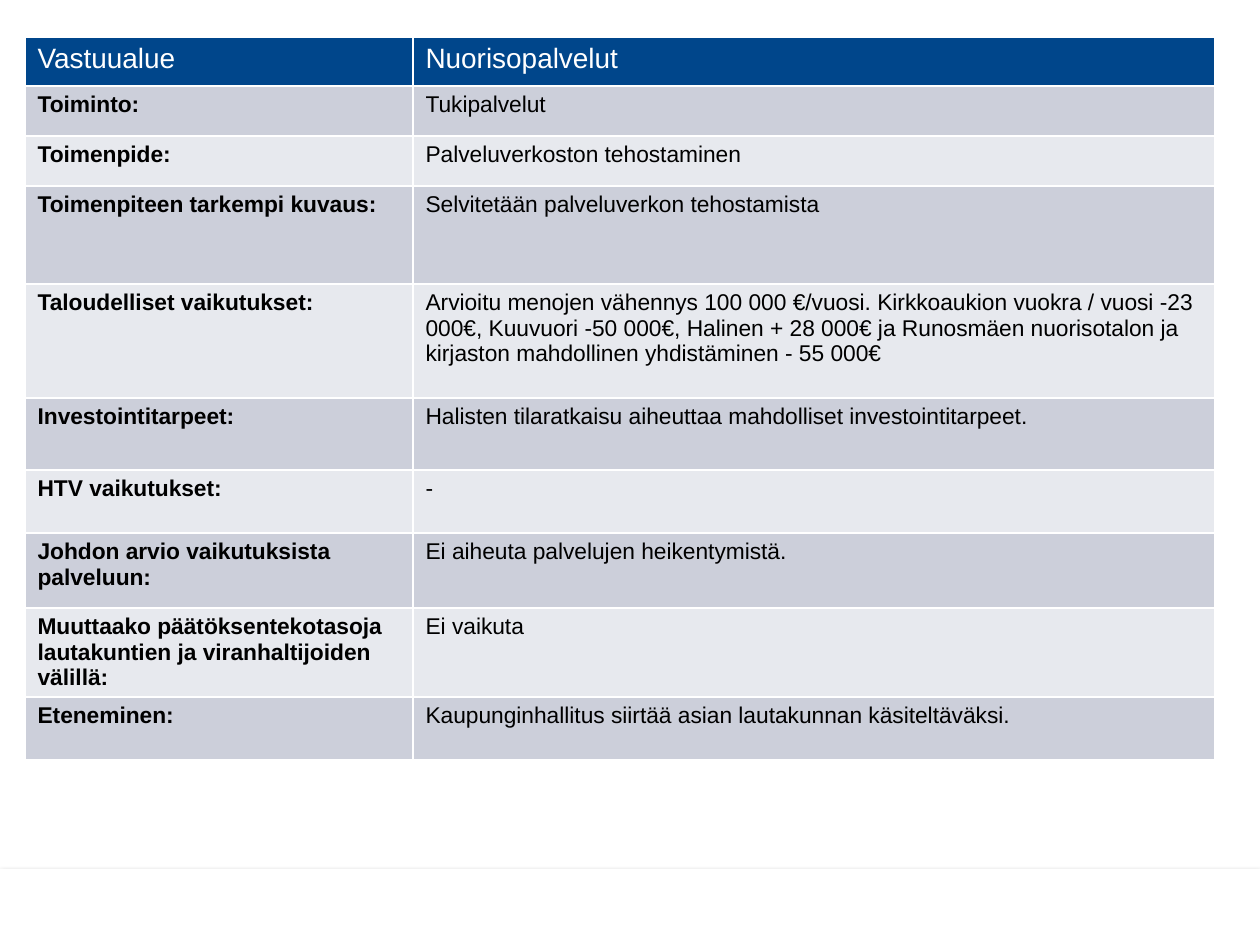
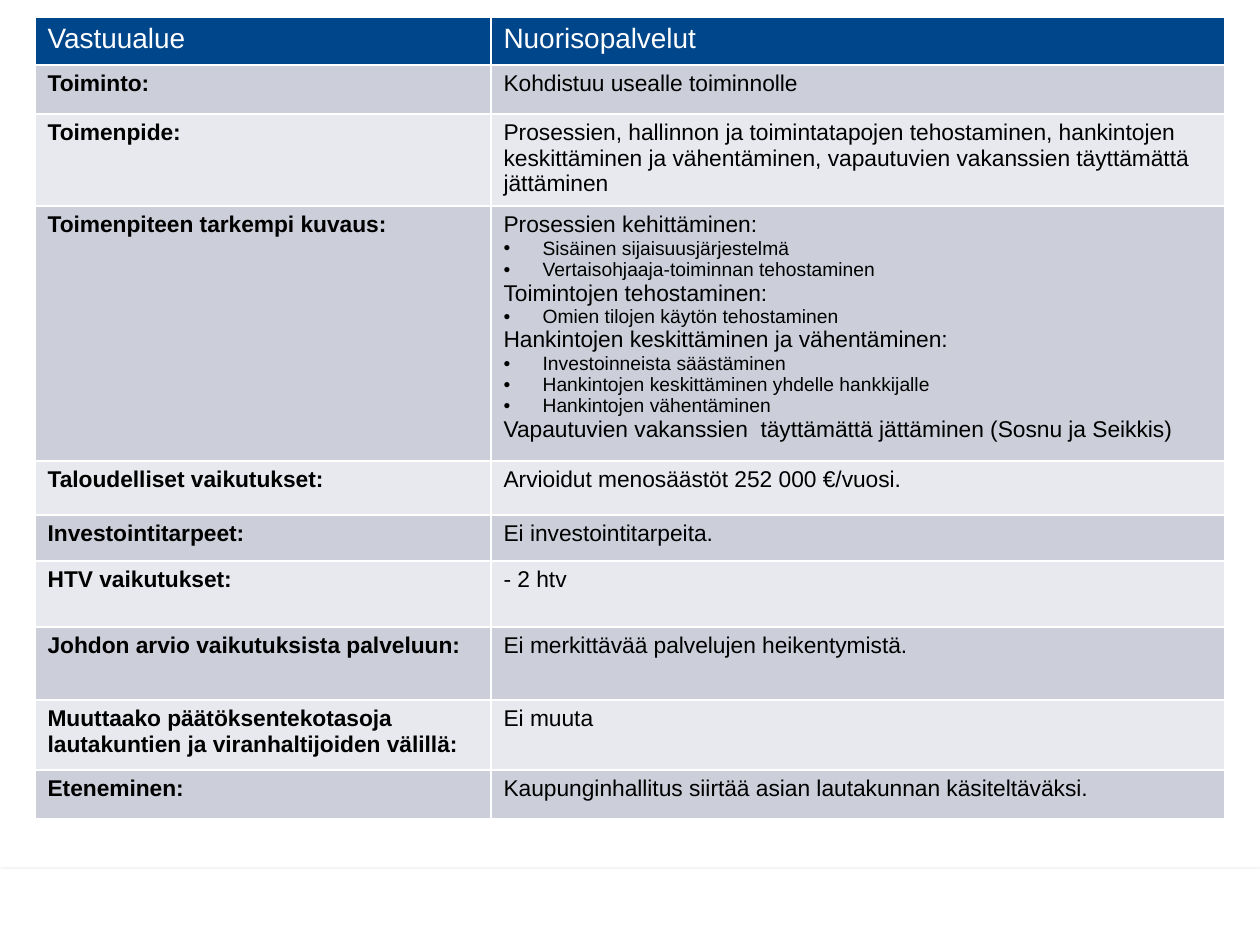
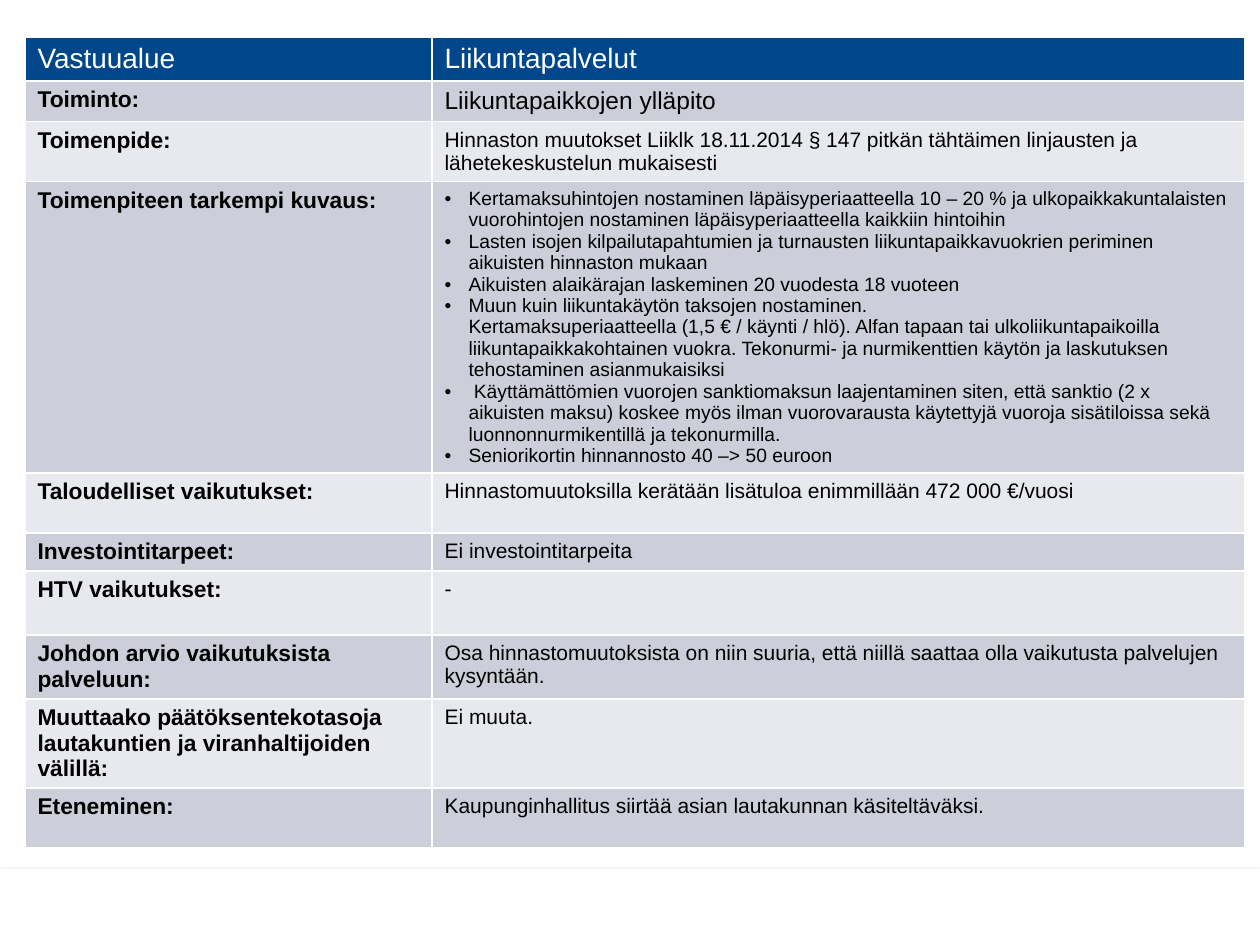
import lxml.etree
import pptx
import pptx.dml.color
import pptx.oxml
import pptx.oxml.ns
import pptx.enum.shapes
import pptx.util

COLORS = {"header": "00468B", "dark_band": "CCCFDA", "light_band": "E7E9EE",
          "white": "FFFFFF", "text": "000000"}
FONT = "Arial"
EMU_PER_PX = 914400 / 126
SLIDE_SIZE = (1260, 945)
FOOTER_TOP = 869
LABEL_SIZE, BULLET_SIZE, HEADER_SIZE = 13, 11, 16

LABELS = [
    "Vastuualue",
    "Toiminto:",
    "Toimenpide:",
    "Toimenpiteen tarkempi kuvaus:",
    "Taloudelliset vaikutukset:",
    "Investointitarpeet:",
    "HTV vaikutukset:",
    "Johdon arvio vaikutuksista palveluun:",
    "Muuttaako päätöksentekotasoja lautakuntien ja viranhaltijoiden välillä:",
    "Eteneminen:",
]
NEXT_STEP = "Kaupunginhallitus siirtää asian lautakunnan käsiteltäväksi."

MEASURES = [
    {
        "corner": (25, 37),
        "columns": (388, 802),
        "rows": (49, 50, 50, 98, 114, 72, 63, 75, 89, 63),
        "size": 13,
        "answers": [
            "Nuorisopalvelut",
            "Tukipalvelut",
            "Palveluverkoston tehostaminen",
            "Selvitetään palveluverkon tehostamista",
            "Arvioitu menojen vähennys 100 000 €/vuosi. Kirkkoaukion vuokra / vuosi -23 000€, "
            "Kuuvuori -50 000€, Halinen + 28 000€ ja Runosmäen nuorisotalon ja kirjaston "
            "mahdollinen yhdistäminen - 55 000€",
            "Halisten tilaratkaisu aiheuttaa mahdolliset investointitarpeet.",
            "-",
            "Ei aiheuta palvelujen heikentymistä.",
            "Ei vaikuta",
            NEXT_STEP,
        ],
    },
    {
        "corner": (35, 17),
        "columns": (456, 734),
        "rows": (48, 49, 92, 255, 54, 46, 66, 73, 70, 49),
        "size": 13,
        "indent": 39,
        "answers": [
            "Nuorisopalvelut",
            "Kohdistuu usealle toiminnolle",
            "Prosessien, hallinnon ja toimintatapojen tehostaminen, hankintojen keskittäminen "
            "ja vähentäminen, vapautuvien vakanssien täyttämättä jättäminen",
            [
                "Prosessien kehittäminen:",
                ["Sisäinen sijaisuusjärjestelmä", "Vertaisohjaaja-toiminnan tehostaminen"],
                "Toimintojen tehostaminen:",
                ["Omien tilojen käytön tehostaminen"],
                "Hankintojen keskittäminen ja vähentäminen:",
                ["Investoinneista säästäminen",
                 "Hankintojen keskittäminen yhdelle hankkijalle",
                 "Hankintojen vähentäminen"],
                "Vapautuvien vakanssien  täyttämättä jättäminen (Sosnu ja Seikkis)",
            ],
            "Arvioidut menosäästöt 252 000 €/vuosi.",
            "Ei investointitarpeita.",
            "- 2 htv",
            "Ei merkittävää palvelujen heikentymistä.",
            "Ei muuta",
            NEXT_STEP,
        ],
    },
    {
        "corner": (25, 37),
        "columns": (407, 813),
        "rows": (42, 41, 60, 291, 60, 38, 64, 64, 88, 60),
        "size": 12,
        "special_sizes": {1: 14},
        "indent": 24,
        "answers": [
            "Liikuntapalvelut",
            "Liikuntapaikkojen ylläpito",
            "Hinnaston muutokset Liiklk 18.11.2014 § 147 pitkän tähtäimen linjausten ja "
            "lähetekeskustelun mukaisesti",
            [[
                "Kertamaksuhintojen nostaminen läpäisyperiaatteella 10 – 20 % ja "
                "ulkopaikkakuntalaisten vuorohintojen nostaminen läpäisyperiaatteella "
                "kaikkiin hintoihin",
                "Lasten isojen kilpailutapahtumien ja turnausten liikuntapaikkavuokrien "
                "periminen aikuisten hinnaston mukaan",
                "Aikuisten alaikärajan laskeminen 20 vuodesta 18 vuoteen",
                "Muun kuin liikuntakäytön taksojen nostaminen.\n"
                "Kertamaksuperiaatteella (1,5 € / käynti / hlö). Alfan tapaan tai "
                "ulkoliikuntapaikoilla liikuntapaikkakohtainen vuokra. Tekonurmi- ja "
                "nurmikenttien käytön ja laskutuksen tehostaminen asianmukaisiksi",
                " Käyttämättömien vuorojen sanktiomaksun laajentaminen siten, että sanktio "
                "(2 x aikuisten maksu) koskee myös ilman vuorovarausta käytettyjä vuoroja "
                "sisätiloissa sekä luonnonnurmikentillä ja tekonurmilla.",
                "Seniorikortin hinnannosto 40 –> 50 euroon",
            ]],
            "Hinnastomuutoksilla kerätään lisätuloa enimmillään 472 000 €/vuosi",
            "Ei investointitarpeita",
            "-",
            "Osa hinnastomuutoksista on niin suuria, että niillä saattaa olla vaikutusta "
            "palvelujen kysyntään.",
            "Ei muuta.",
            NEXT_STEP,
        ],
    },
]


def px(length):
    return pptx.util.Emu(round(length * EMU_PER_PX))


def rgb(name):
    return pptx.dml.color.RGBColor.from_string(COLORS[name])


def sub(parent, tag, **attributes):
    return lxml.etree.SubElement(parent, pptx.oxml.ns.qn(tag), attributes)


def write(paragraph, text, size=LABEL_SIZE, bold=False, color="text", indent=0):
    if indent:
        properties = paragraph._p.get_or_add_pPr()
        properties.set("marL", str(px(indent)))
        properties.set("indent", str(-px(indent)))
        sub(properties, "a:buFont", typeface=FONT)
        sub(properties, "a:buChar", char="•")
    for number, line in enumerate(text.split("\n")):
        if number:
            paragraph.add_line_break()
        run = paragraph.add_run()
        run.text = line
        run.font.name = FONT
        run.font.size = pptx.util.Pt(size)
        run.font.bold = bold
        run.font.color.rgb = rgb(color)


def flatten(answer, size, indent):
    for part in [answer] if isinstance(answer, str) else answer:
        if isinstance(part, str):
            yield part, size, 0
        else:
            for bullet in part:
                yield bullet, BULLET_SIZE, indent


def paint(cell, fill):
    properties = cell._tc.get_or_add_tcPr()
    for side in ("a:lnL", "a:lnR", "a:lnT", "a:lnB"):
        border = sub(properties, side, w=str(pptx.util.Pt(1)))
        sub(sub(border, "a:solidFill"), "a:srgbClr", val=COLORS["white"])
    cell.fill.solid()
    cell.fill.fore_color.rgb = rgb(fill)


def add_footer(slide):
    footer = slide.shapes.add_shape(
        pptx.enum.shapes.MSO_SHAPE.RECTANGLE, 0, px(FOOTER_TOP),
        px(SLIDE_SIZE[0]), px(SLIDE_SIZE[1] - FOOTER_TOP))
    footer.fill.solid()
    footer.fill.fore_color.rgb = rgb("white")
    footer.line.fill.background()
    footer.shadow.inherit = False
    effects = footer._element.spPr.find(pptx.oxml.ns.qn("a:effectLst"))
    shadow = sub(effects, "a:outerShdw", blurRad=str(pptx.util.Pt(3.1)),
                 dist=str(pptx.util.Pt(1.8)), dir="5400000", rotWithShape="0")
    sub(sub(shadow, "a:srgbClr", val=COLORS["text"]), "a:alpha", val="35000")


def add_measure(slide, measure):
    columns, rows = measure["columns"], measure["rows"]
    left, top = measure["corner"]
    table = slide.shapes.add_table(len(rows), len(columns), px(left), px(top),
                                   px(sum(columns)), px(sum(rows))).table
    for column, width in zip(table.columns, columns):
        column.width = px(width)
    for index, (label, answer) in enumerate(zip(LABELS, measure["answers"])):
        table.rows[index].height = px(rows[index])
        label_cell, answer_cell = table.cell(index, 0), table.cell(index, 1)
        header = index == 0
        fill = "header" if header else "dark_band" if index % 2 else "light_band"
        for cell in (label_cell, answer_cell):
            paint(cell, fill)
        color = "white" if header else "text"
        write(label_cell.text_frame.paragraphs[0], label, bold=not header,
              size=HEADER_SIZE if header else LABEL_SIZE, color=color)
        size = HEADER_SIZE if header else measure.get("special_sizes", {}).get(
            index, measure["size"])
        frame = answer_cell.text_frame
        for number, (text, text_size, indent) in enumerate(
                flatten(answer, size, measure.get("indent", 0))):
            paragraph = frame.add_paragraph() if number else frame.paragraphs[0]
            write(paragraph, text, size=text_size, color=color, indent=indent)


def main():
    deck = pptx.Presentation()
    deck.slide_width, deck.slide_height = map(px, SLIDE_SIZE)
    for measure in MEASURES:
        slide = deck.slides.add_slide(deck.slide_layouts[6])
        add_footer(slide)
        add_measure(slide, measure)
    deck.save("out.pptx")


if __name__ == "__main__":
    main()
